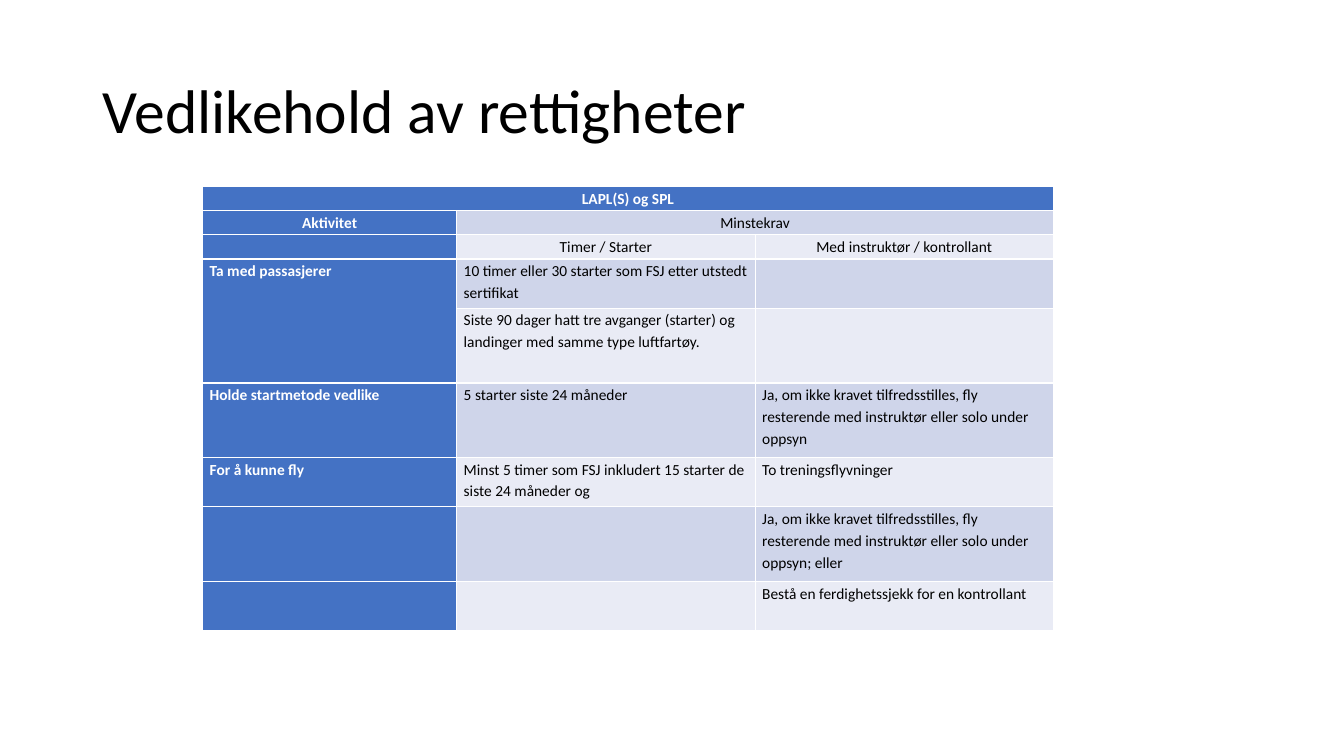
"""Build the slide on keeping LAPL(S) and SPL privileges valid."""
from dataclasses import dataclass

from lxml import etree
from pptx import Presentation
from pptx import util as u
from pptx.dml.color import RGBColor
from pptx.enum import text
from pptx.oxml import ns


@dataclass(frozen=True)
class Theme:
    font: str = "Calibri"
    ink: RGBColor = RGBColor(0x00, 0x00, 0x00)
    white: RGBColor = RGBColor(0xFF, 0xFF, 0xFF)
    heading: RGBColor = RGBColor(0x44, 0x72, 0xC4)
    bands: tuple = (RGBColor(0xE9, 0xEB, 0xF5), RGBColor(0xCF, 0xD5, 0xEA))
    title_size: int = 44
    table_size: int = 11


theme = Theme()


def set_font(paragraph, size, color, bold=False):
    paragraph.font.name = theme.font
    paragraph.font.size = u.Pt(size)
    paragraph.font.color.rgb = color
    paragraph.font.bold = bold


deck = Presentation()
deck.slide_width = u.Inches(13.33)
deck.slide_height = u.Inches(7.5)
slide = deck.slides.add_slide(deck.slide_layouts[5])

title = slide.shapes.title
title.left, title.top = u.Inches(0.92), u.Inches(0.4)
title.width, title.height = u.Inches(11.5), u.Inches(1.45)
title.text_frame.text = "Vedlikehold av rettigheter"
title.text_frame.vertical_anchor = text.MSO_ANCHOR.MIDDLE
heading = title.text_frame.paragraphs[0]
heading.alignment = text.PP_ALIGN.LEFT
heading.line_spacing = 0.9
set_font(heading, theme.title_size, theme.ink)

supervised = "Ja, om ikke kravet tilfredsstilles, fly resterende med instruktør eller solo under oppsyn"
requirements = [
    (0.24, "LAPL(S) og SPL", "", ""),
    (0.24, "Aktivitet", "Minstekrav", ""),
    (0.24, "", "Timer / Starter", "Med instruktør / kontrollant"),
    (0.49, "Ta med passasjerer", "10 timer eller 30 starter som FSJ etter utstedt sertifikat", ""),
    (0.74, "", "Siste 90 dager hatt tre avganger (starter) og landinger med samme type luftfartøy.", ""),
    (0.74, "Holde startmetode vedlike", "5 starter siste 24 måneder", supervised),
    (0.49, "For å kunne fly", "Minst 5 timer som FSJ inkludert 15 starter de siste 24 måneder og",
     "To treningsflyvninger"),
    (0.74, "", "", supervised + "; eller"),
    (0.49, "", "", "Bestå en ferdighetssjekk for en kontrollant"),
]
column_widths = (2.52, 2.96, 2.96)
centred_rows = 3

table = slide.shapes.add_table(
    len(requirements), len(column_widths), u.Inches(2.01), u.Inches(1.85),
    u.Inches(sum(column_widths)), u.Inches(sum(row[0] for row in requirements)),
).table
table.first_col = True
for column, width in zip(table.columns, column_widths):
    column.width = u.Inches(width)

for r, (height, *wordings) in enumerate(requirements):
    table.rows[r].height = u.Inches(height)
    for c, wording in enumerate(wordings):
        is_heading = r == 0 or c == 0
        cell = table.cell(r, c)
        cell.margin_left = cell.margin_right = u.Inches(0.07)
        cell.margin_top = cell.margin_bottom = 0
        cell.fill.solid()
        cell.fill.fore_color.rgb = theme.heading if is_heading else theme.bands[r % 2]
        entry = cell.text_frame.paragraphs[0]
        entry.alignment = text.PP_ALIGN.CENTER if r < centred_rows else text.PP_ALIGN.LEFT
        entry.line_spacing = 1.15
        entry.space_after = u.Pt(10)
        set_font(entry, theme.table_size, theme.white if is_heading else theme.ink, is_heading)
        if wording:
            entry.add_run().text = wording
        else:
            etree.SubElement(entry._p, ns.qn("a:endParaRPr"), sz=str(theme.table_size * 100))

for first, last in (((0, 0), (0, 2)), ((1, 1), (1, 2)), ((3, 0), (4, 0))):
    table.cell(*first).merge(table.cell(*last))

deck.save("out.pptx")
